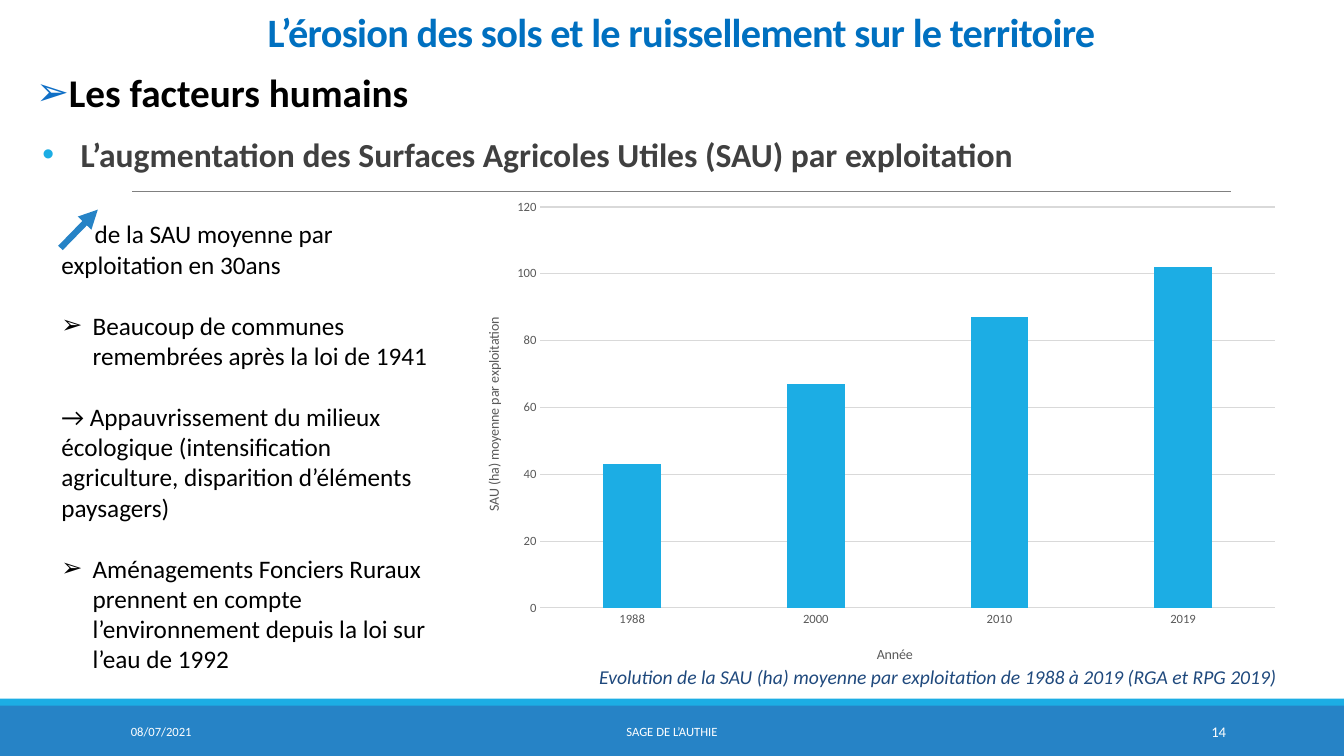
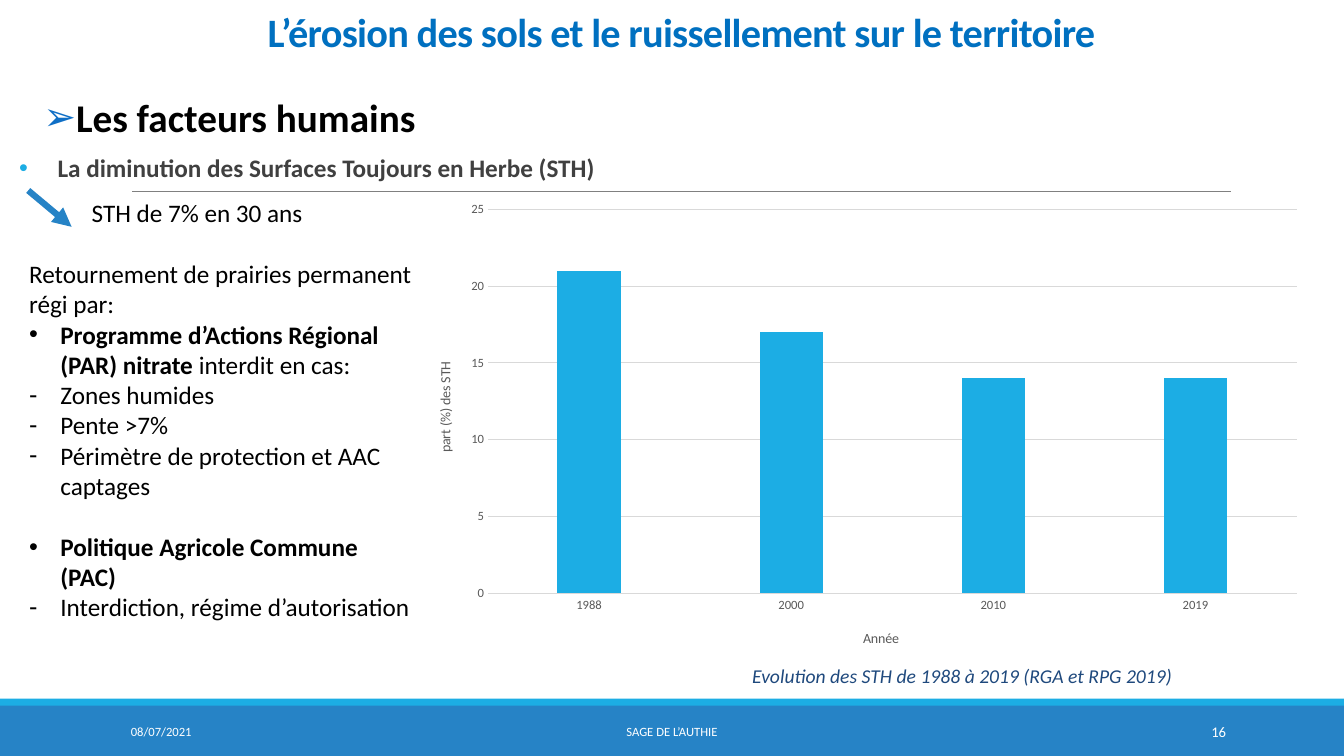
import pptx
import pptx.chart.data
import pptx.dml.color
import pptx.enum.chart
import pptx.enum.shapes
import pptx.enum.text
import pptx.oxml
import pptx.oxml.ns
import pptx.util

Pt = pptx.util.Pt
Inches = pptx.util.Inches
Align = pptx.enum.text.PP_ALIGN
Anchor = pptx.enum.text.MSO_ANCHOR
qn = pptx.oxml.ns.qn

COLOURS = {
    "footer": "2683C6", "accent": "1CADE4", "rule": "808080", "title": "0070C0",
    "heading_bullet": "0F6FC6", "black": "000000", "topic": "404040",
    "caption": "1F497D", "axis": "595959", "grid": "D9D9D9", "white": "FFFFFF",
}
FONT = "Calibri"
YEARS = ["1988", "2000", "2010", "2019"]
HANGING = 0.31
BLANK_LINE = 22


def colour(name):
    return pptx.dml.color.RGBColor.from_string(COLOURS[name])


def xml(tag, children="", **attributes):
    """Parse one DrawingML or chart element from its prefixed tag."""
    listed = "".join(f' {key}="{value}"' for key, value in attributes.items())
    namespaces = pptx.oxml.ns.nsdecls("a", "c")
    return pptx.oxml.parse_xml(f"<{tag} {namespaces}{listed}>{children}</{tag}>")


def set_layout(parent, index, **shares):
    """Place a chart part by shares of the chart's size."""
    for old in parent.findall(qn("c:layout")):
        parent.remove(old)
    target = '<c:layoutTarget val="inner"/>' if "w" in shares else ""
    modes = '<c:xMode val="edge"/><c:yMode val="edge"/>'
    values = "".join(f'<c:{key} val="{value}"/>' for key, value in shares.items())
    manual = f"<c:manualLayout>{target}{modes}{values}</c:manualLayout>"
    parent.insert(index, xml("c:layout", manual))


def item(text, bullet=None, **options):
    """Describe a paragraph; text is a string or a list of (string, bold) runs."""
    runs = [(text, False)] if isinstance(text, str) else text
    if bullet:
        options.setdefault("margin", HANGING)
        options.setdefault("indent", -options["margin"])
    return {"runs": runs, "bullet": bullet, **options}


class Deck:
    """Holds the style and the current slide; places are percent of the slide."""

    def __init__(self):
        self.presentation = pptx.Presentation()
        self.presentation.slide_width = Inches(13.33)
        self.presentation.slide_height = Inches(7.5)
        self.slide = None

    def x(self, share):
        return round(self.presentation.slide_width * share / 100)

    def y(self, share):
        return round(self.presentation.slide_height * share / 100)

    def place(self, left, top, width, height):
        return self.x(left), self.y(top), self.x(width), self.y(height)

    def style(self, font, size, name, bold=False, italic=False):
        font.name, font.size, font.bold, font.italic = FONT, Pt(size), bold, italic
        font.color.rgb = colour(name)

    def new_slide(self, title, number):
        layout = self.presentation.slide_layouts[5]
        self.slide = self.presentation.slides.add_slide(layout)
        self.band(92.4, 1, "accent")
        self.band(93.33, 6.67, "footer")
        self.line((9.83, 25.33), (91.58, 25.33), "rule", 0.5)
        self.title(title)
        footers = [
            (9, 20.25, "08/07/2021", Align.LEFT, 9),
            (30.23, 39.53, "SAGE DE L’AUTHIE", Align.CENTER, 9),
            (81.23, 10.73, number, Align.RIGHT, 10.5),
        ]
        for left, width, text, align, size in footers:
            self.text((left, 94.13, width, 5.33), [item(text)], size, "white",
                      align=align, anchor=Anchor.MIDDLE)

    def title(self, text):
        shape = self.slide.shapes.title
        shape.left, shape.top, shape.width, shape.height = self.place(9.45, 0.53, 82.5, 7.47)
        frame = shape.text_frame
        frame.auto_size = pptx.enum.text.MSO_AUTO_SIZE.NONE
        frame.vertical_anchor = Anchor.BOTTOM
        paragraph = frame.paragraphs[0]
        paragraph.alignment, paragraph.line_spacing = Align.CENTER, 0.85
        run = paragraph.add_run()
        run.text = text
        self.style(run.font, 28.8, "title", bold=True)
        run.font._element.set("spc", "-50")

    def band(self, top, height, name):
        shape = self.slide.shapes.add_shape(
            pptx.enum.shapes.MSO_SHAPE.RECTANGLE, *self.place(0, top, 100, height))
        shape.shadow.inherit = False
        shape.fill.solid()
        shape.fill.fore_color.rgb = colour(name)
        shape.line.fill.background()

    def line(self, start, end, name, width, arrow=False):
        connector = self.slide.shapes.add_connector(
            pptx.enum.shapes.MSO_CONNECTOR.STRAIGHT,
            self.x(start[0]), self.y(start[1]), self.x(end[0]), self.y(end[1]))
        connector.line.color.rgb = colour(name)
        connector.line.width = Pt(width)
        if arrow:
            connector.line._get_or_add_ln().append(xml("a:tailEnd", type="triangle"))
        connector._element.spPr.append(xml("a:effectLst"))

    def text(self, box, items, size, name, align=Align.LEFT, anchor=Anchor.TOP,
             italic=False, inset=0.1, spacing=None):
        frame = self.slide.shapes.add_textbox(*self.place(*box)).text_frame
        frame.word_wrap = True
        frame.vertical_anchor = anchor
        frame.margin_left = frame.margin_right = Inches(inset)
        for index, entry in enumerate(items):
            paragraph = frame.add_paragraph() if index else frame.paragraphs[0]
            paragraph.alignment, paragraph.line_spacing = align, spacing
            paragraph.space_before = Pt(entry.get("before", 0))
            self.indent(paragraph, entry)
            for text, bold in entry["runs"]:
                run = paragraph.add_run()
                run.text = text
                self.style(run.font, size, name, bold, italic)

    def indent(self, paragraph, entry):
        """Set margin, first-line indent and bullet of a paragraph."""
        properties = paragraph._p.get_or_add_pPr()
        properties.set("marL", str(Inches(entry.get("margin", 0))))
        properties.set("indent", str(Inches(entry.get("indent", 0))))
        if entry["bullet"]:
            if "bullet_colour" in entry:
                value = COLOURS[entry["bullet_colour"]]
                properties.append(xml("a:buClr", f'<a:srgbClr val="{value}"/>'))
            properties.append(xml("a:buFont", typeface="Arial"))
            properties.append(xml("a:buChar", char=entry["bullet"]))

    def heading(self, left, top, text):
        entry = item([(text, True)], "➢", margin=0, indent=0,
                     bullet_colour="heading_bullet")
        self.text((left, top, 50, 7.6), [entry], 28, "black")

    def topic(self, box, text, size):
        entry = item([(text, True)], "•", margin=0.38, bullet_colour="accent")
        self.text(box, [entry], size, "topic", inset=0, spacing=0.9)

    def caption(self, left, top, text):
        self.text((left, top, 67, 4.53), [item(text)], 14, "caption",
                  align=Align.CENTER, italic=True)

    def arrow(self, start, end):
        self.line(start, end, "footer", 4.5, arrow=True)

    def column_chart(self, box, values, value_title, title_top, step, plot_left):
        data = pptx.chart.data.CategoryChartData()
        data.categories = YEARS
        data.add_series("Series 1", values)
        chart = self.slide.shapes.add_chart(
            pptx.enum.chart.XL_CHART_TYPE.COLUMN_CLUSTERED, *self.place(*box), data).chart
        chart.has_legend = chart.has_title = False
        space = chart._chartSpace
        space.find(qn("c:chart")).addnext(
            xml("c:spPr", "<a:noFill/><a:ln><a:noFill/></a:ln>"))
        self.style(chart.font, 10, "black")
        plot = chart.plots[0]
        plot.vary_by_categories = False
        plot.gap_width, plot.overlap = 219, -27
        fill = plot.series[0].format.fill
        fill.solid()
        fill.fore_color.rgb = colour("accent")
        set_layout(space.find(qn("c:chart")).find(qn("c:plotArea")), 0,
                   x=plot_left, y=0.04, w=round(0.98 - plot_left, 2), h=0.82)
        self.axis(chart.category_axis, "Année", 0.5, 0.93)
        self.axis(chart.value_axis, value_title, 0.03, title_top)
        chart.category_axis.format.line.color.rgb = colour("grid")
        chart.category_axis.format.line.width = Pt(0.75)
        axis = chart.value_axis
        axis.format.line.fill.background()
        axis.minimum_scale, axis.maximum_scale, axis.major_unit = 0, step[0], step[1]
        axis.has_major_gridlines = True
        axis.major_gridlines.format.line.color.rgb = colour("grid")
        axis.major_gridlines.format.line.width = Pt(0.75)

    def axis(self, axis, title, left, top):
        none = pptx.enum.chart.XL_TICK_MARK.NONE
        axis.major_tick_mark = axis.minor_tick_mark = none
        self.style(axis.tick_labels.font, 9, "axis")
        run = axis.axis_title.text_frame.paragraphs[0].add_run()
        run.text = title
        self.style(run.font, 10, "axis")
        set_layout(axis.axis_title._element, 1, x=left, y=top)


def farm_area_slide(deck, title, heading):
    deck.new_slide(title, "14")
    deck.topic((3.15, 17.6, 78, 11.5),
               "L’augmentation des Surfaces Agricoles Utiles (SAU) par exploitation", 24)
    deck.column_chart((34, 24.8, 62.1, 64.67), [43, 67, 87, 102],
                      "SAU (ha) moyenne par exploitation", 0.26, (120, 20), 0.1)
    deck.heading(1.95, 8.4, heading)
    deck.caption(36.3, 87.33, "Evolution de la SAU (ha) moyenne par exploitation "
                              "de 1988 à 2019 (RGA et RPG 2019)")
    deck.arrow((4.5, 32.8), (7.28, 27.73))
    deck.text((3.83, 28.27, 29.4, 66), [
        item("de la SAU moyenne par exploitation en 30ans", indent=0.33),
        item("Beaucoup de communes remembrées après la loi de 1941", "➢", before=BLANK_LINE),
        item("→ Appauvrissement du milieux écologique (intensification agriculture, "
             "disparition d’éléments paysagers)", before=BLANK_LINE),
        item("Aménagements Fonciers Ruraux prennent en compte l’environnement "
             "depuis la loi sur l’eau de 1992", "➢", before=BLANK_LINE),
    ], 18, "black")


def grassland_slide(deck, title, heading):
    deck.new_slide(title, "16")
    deck.topic((1.43, 20, 88, 8.67), "La diminution des Surfaces Toujours en Herbe (STH)", 18)
    deck.heading(2.48, 11.73, heading)
    deck.caption(38.1, 87.2, "Evolution des STH de 1988 à 2019 (RGA et RPG 2019)")
    deck.text((1.43, 25.47, 29.93, 61.87), [
        item("STH de 7% en 30 ans", indent=0.62),
        item("Retournement de prairies permanent régi par:", before=BLANK_LINE),
        item([("Programme d’Actions Régional (PAR) nitrate ", True),
              ("interdit en cas:", False)], "•"),
        item("Zones humides", "-"),
        item("Pente >7%", "-"),
        item("Périmètre de protection et AAC captages", "-"),
        item([("Politique Agricole Commune (PAC)", True)], "•", before=BLANK_LINE),
        item("Interdiction, régime d’autorisation", "-"),
    ], 18, "black")
    deck.column_chart((30.23, 25.2, 67.6, 62), [21, 17, 14, 14],
                      "part (%) des STH", 0.36, (25, 5), 0.09)
    deck.arrow((2.1, 25.2), (5.33, 30))


def main():
    deck = Deck()
    shared = ("L’érosion des sols et le ruissellement sur le territoire", "Les facteurs humains")
    farm_area_slide(deck, *shared)
    grassland_slide(deck, *shared)
    deck.presentation.save("out.pptx")


if __name__ == "__main__":
    main()
